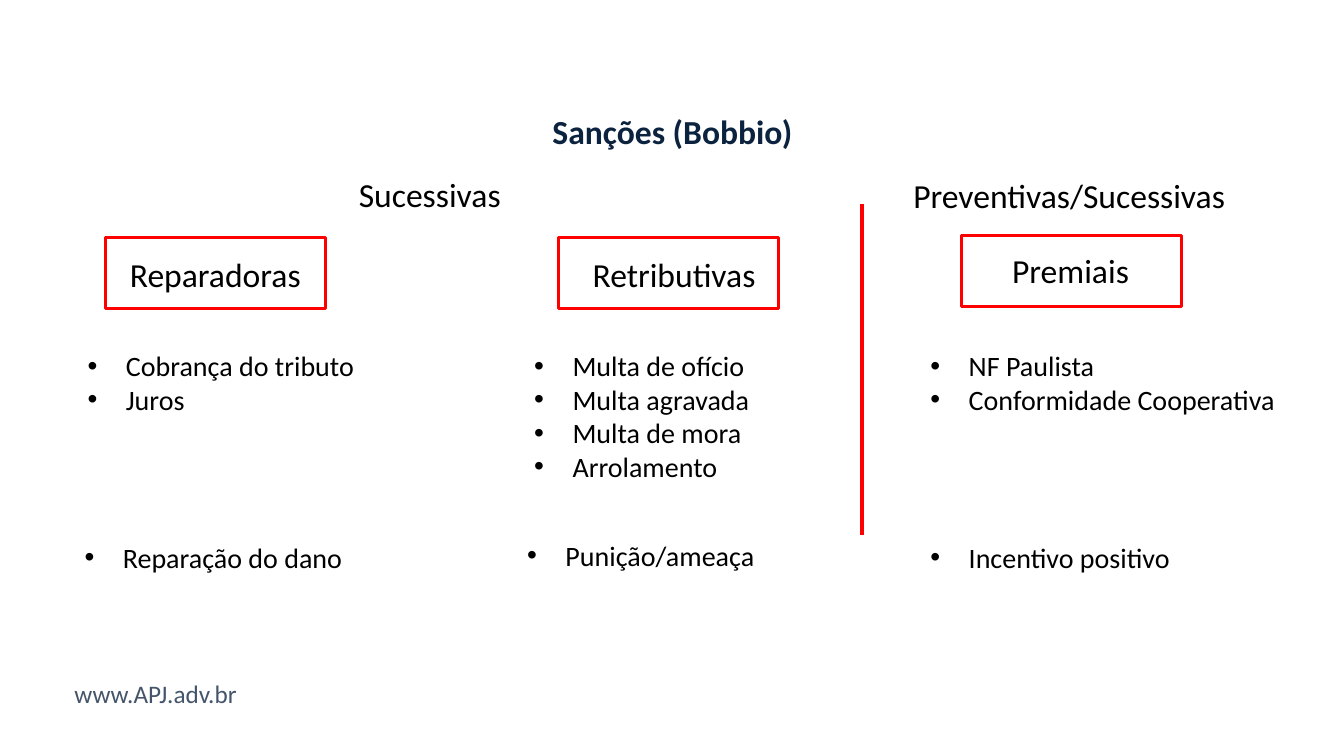
from dataclasses import dataclass

from lxml.etree import SubElement
from pptx import Presentation
from pptx.dml.color import RGBColor
from pptx.enum.shapes import MSO_CONNECTOR, MSO_SHAPE
from pptx.enum.text import MSO_ANCHOR, MSO_AUTO_SIZE, PP_ALIGN
from pptx.oxml.ns import qn
from pptx.slide import Slide
from pptx.text.text import _Paragraph as Paragraph
from pptx.util import Inches, Pt


@dataclass(frozen=True)
class Theme:
    font: str = "Calibri"
    title: RGBColor = RGBColor(0x0B, 0x23, 0x3F)
    text: RGBColor = RGBColor(0, 0, 0)
    accent: RGBColor = RGBColor(0xFF, 0, 0)
    footer: RGBColor = RGBColor(0x44, 0x54, 0x6A)
    heading_size: int = 24
    body_size: int = 20
    footer_size: int = 18
    frame_width: float = 2.25
    divider_width: float = 3


@dataclass(frozen=True)
class Box:
    left: float
    top: float
    width: float
    height: float


@dataclass(frozen=True)
class Sanction:
    name: str
    name_box: Box
    frame_left: float
    frame_top: float
    examples: str
    examples_box: Box
    purpose: str
    purpose_box: Box


THEME = Theme()
FRAME_WIDTH, FRAME_HEIGHT = 2.18, 0.7
BULLET_INDENT = 0.38

SANCTIONS = [
    Sanction("Reparadoras", Box(1.19, 2.47, 1.91, 0.5), 1.05, 2.36,
             "Cobrança do tributo\nJuros", Box(0.77, 3.41, 2.86, 0.77),
             "Reparação do dano", Box(0.74, 5.31, 2.77, 0.44)),
    Sanction("Retributivas", Box(5.78, 2.47, 1.84, 0.5), 5.54, 2.36,
             "Multa de ofício\nMulta agravada\nMulta de mora\nArrolamento",
             Box(5.2, 3.41, 2.35, 1.45),
             "Punição/ameaça", Box(5.13, 5.29, 2.47, 0.44)),
    Sanction("Premiais", Box(9.94, 2.43, 1.37, 0.5), 9.54, 2.34,
             "NF Paulista\nConformidade Cooperativa", Box(9.13, 3.41, 3.64, 0.77),
             "Incentivo positivo", Box(9.13, 5.31, 2.6, 0.44)),
]


def add_bullet(paragraph: Paragraph) -> None:
    properties = paragraph._p.get_or_add_pPr()
    properties.set("marL", str(Inches(BULLET_INDENT)))
    properties.set("indent", str(-Inches(BULLET_INDENT)))
    SubElement(properties, qn("a:buFont")).set("typeface", "Arial")
    SubElement(properties, qn("a:buChar")).set("char", "•")


def add_text(slide: Slide, text: str, box: Box, *, size: int = THEME.heading_size,
             color: RGBColor = THEME.text, bold: bool = False,
             bullets: bool = False) -> None:
    """Add a fitted, unwrapped text box with one paragraph per line of text."""
    shape = slide.shapes.add_textbox(
        Inches(box.left), Inches(box.top), Inches(box.width), Inches(box.height))
    frame = shape.text_frame
    frame.word_wrap = False
    frame.auto_size = MSO_AUTO_SIZE.SHAPE_TO_FIT_TEXT
    frame.text = text
    for paragraph in frame.paragraphs:
        if bullets:
            add_bullet(paragraph)
        font = paragraph.font
        font.name = THEME.font
        font.size = Pt(size)
        font.bold = bold
        font.color.rgb = color


def add_title(slide: Slide, text: str) -> None:
    add_text(slide, text, Box(0.92, 0.98, 11.5, 0.7), color=THEME.title, bold=True)
    frame = slide.shapes[-1].text_frame
    frame.word_wrap = True
    frame.auto_size = MSO_AUTO_SIZE.NONE
    frame.vertical_anchor = MSO_ANCHOR.MIDDLE
    frame.paragraphs[0].alignment = PP_ALIGN.CENTER
    frame.paragraphs[0].line_spacing = 0.9


def add_frame(slide: Slide, left: float, top: float) -> None:
    shape = slide.shapes.add_shape(
        MSO_SHAPE.RECTANGLE, Inches(left), Inches(top),
        Inches(FRAME_WIDTH), Inches(FRAME_HEIGHT))
    shape.shadow.inherit = False
    shape.fill.background()
    shape.line.color.rgb = THEME.accent
    shape.line.width = Pt(THEME.frame_width)


def add_divider(slide: Slide, x: float, top: float, bottom: float) -> None:
    connector = slide.shapes.add_connector(
        MSO_CONNECTOR.STRAIGHT, Inches(x), Inches(top), Inches(x), Inches(bottom))
    connector.line.color.rgb = THEME.accent
    connector.line.width = Pt(THEME.divider_width)
    SubElement(connector._element.spPr, qn("a:effectLst"))


def add_sanction(slide: Slide, sanction: Sanction) -> None:
    add_frame(slide, sanction.frame_left, sanction.frame_top)
    add_text(slide, sanction.name, sanction.name_box)
    for text, box in ((sanction.examples, sanction.examples_box),
                      (sanction.purpose, sanction.purpose_box)):
        add_text(slide, text, box, size=THEME.body_size, bullets=True)


def main() -> None:
    presentation = Presentation()
    presentation.slide_width = Inches(13.33)
    presentation.slide_height = Inches(7.5)
    slide = presentation.slides.add_slide(presentation.slide_layouts[6])

    add_title(slide, "Sanções (Bobbio)")
    add_text(slide, "Sucessivas", Box(3.46, 1.68, 1.62, 0.5))
    add_text(slide, "Preventivas/Sucessivas", Box(8.96, 1.69, 3.33, 0.5))
    for sanction in SANCTIONS:
        add_sanction(slide, sanction)
    add_divider(slide, 8.55, 2.02, 5.31)
    add_text(slide, "www.APJ.adv.br", Box(0.64, 6.68, 1.89, 0.4),
             size=THEME.footer_size, color=THEME.footer)

    presentation.save("out.pptx")


if __name__ == "__main__":
    main()
